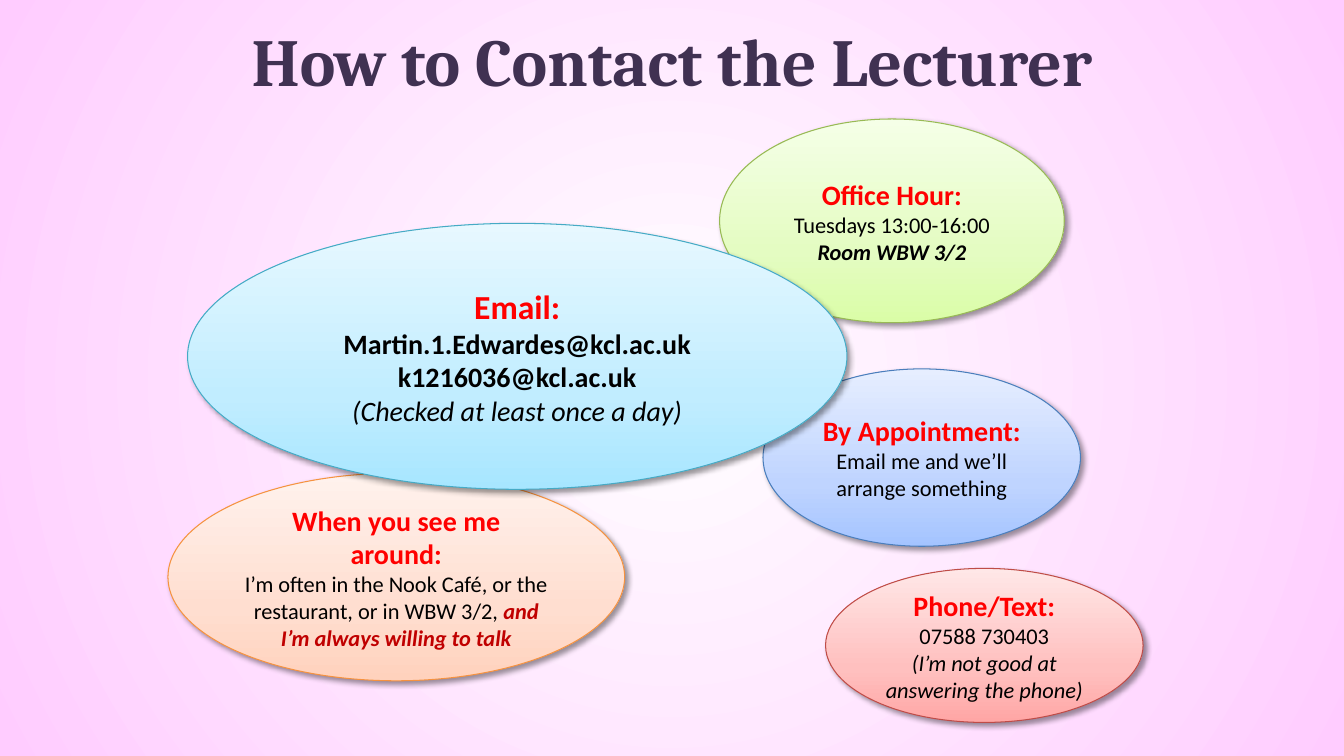
"""Build the slide that tells students how to contact the lecturer."""
import copy

import lxml.etree
import pptx
import pptx.dml.color
import pptx.enum.shapes
import pptx.enum.text
import pptx.oxml
import pptx.oxml.ns
import pptx.util

Pt = pptx.util.Pt
RGBColor = pptx.dml.color.RGBColor
qn = pptx.oxml.ns.qn

WHITE = RGBColor(0xFF, 0xFF, 0xFF)
PINK = RGBColor(0xFF, 0xCC, 0xFF)
PLUM = RGBColor(0x40, 0x31, 0x52)
BLACK = RGBColor(0, 0, 0)
RED = RGBColor(0xFF, 0, 0)
DARK_RED = RGBColor(0xC0, 0, 0)

ROSE = [RGBColor(0xFF, 0xA6, 0xA5), RGBColor(0xFF, 0xC0, 0xBF), RGBColor(0xFF, 0xE7, 0xE7)]
ROSE_EDGE = RGBColor(0xBF, 0x4C, 0x48)
BLUE = [RGBColor(0xA4, 0xC4, 0xFF), RGBColor(0xBF, 0xD4, 0xFF), RGBColor(0xE6, 0xEE, 0xFF)]
BLUE_EDGE = RGBColor(0x4B, 0x7E, 0xBC)
GREEN = [RGBColor(0xDA, 0xFD, 0xA7), RGBColor(0xE4, 0xFC, 0xC2), RGBColor(0xF5, 0xFF, 0xE7)]
GREEN_EDGE = RGBColor(0x98, 0xB9, 0x55)
ORANGE = [RGBColor(0xFF, 0xD2, 0xBD), RGBColor(0xFF, 0xDE, 0xD0), RGBColor(0xFF, 0xF2, 0xED)]
ORANGE_EDGE = RGBColor(0xF6, 0x92, 0x40)
AQUA = [RGBColor(0xA7, 0xE6, 0xFF), RGBColor(0xC1, 0xED, 0xFF), RGBColor(0xE7, 0xF8, 0xFF)]
AQUA_EDGE = RGBColor(0x46, 0xAA, 0xC5)

BUBBLE_STOPS = (0, 0.35, 1)
PLAIN = {"bold": False, "italic": False}
BOLD = {"bold": True, "italic": False}
ITALIC = {"bold": False, "italic": True}
BOLD_ITALIC = {"bold": True, "italic": True}

NS = 'xmlns:a="http://schemas.openxmlformats.org/drawingml/2006/main"'
SHADOW = (
    f'<a:outerShdw {NS} blurRad="{Pt(4)}" dist="{Pt(3)}" dir="2700000" algn="tl" rotWithShape="0">'
    '<a:srgbClr val="000000"><a:alpha val="40000"/></a:srgbClr></a:outerShdw>'
)
RADIAL = (
    f'<a:path {NS} path="circle">'
    '<a:fillToRect l="50000" t="50000" r="50000" b="50000"/></a:path>'
)


def set_stops(fill, colours, positions):
    """Give a gradient fill its colours and their positions."""
    for stop, colour, position in zip(fill.gradient_stops, colours, positions):
        stop.color.rgb = colour
        stop.position = position


def paint_background(slide):
    """Paint a radial gradient that is white in the middle."""
    fill = slide.background.fill
    fill.gradient()
    set_stops(fill, (WHITE, PINK), (0, 1))
    direction = next(slide.element.iter(qn("a:lin")))
    direction.getparent().replace(direction, pptx.oxml.parse_xml(RADIAL))


def add_run(paragraph, text, size, colour, style, face="Calibri"):
    """Add one formatted run to a paragraph."""
    run = paragraph.add_run()
    run.text = text
    for name, value in {"name": face, "size": Pt(size), **style}.items():
        setattr(run.font, name, value)
    run.font.color.rgb = colour


def place_title(slide, text):
    """Move the title placeholder and write the heading in it."""
    heading = slide.shapes.title
    place = {"left": Pt(120), "top": Pt(0), "width": Pt(720), "height": Pt(85)}
    for name, value in place.items():
        setattr(heading, name, value)
    heading.text_frame.vertical_anchor = pptx.enum.text.MSO_ANCHOR.MIDDLE
    paragraph = heading.text_frame.paragraphs[0]
    paragraph.alignment = pptx.enum.text.PP_ALIGN.CENTER
    add_run(paragraph, text, 48, PLUM, BOLD, "Cambria")


def add_bubble(slide, box, colours, edge, paragraphs):
    """Add a shaded ellipse holding paragraphs, each a list of runs."""
    bubble = slide.shapes.add_shape(
        pptx.enum.shapes.MSO_SHAPE.OVAL, *(Pt(length) for length in box)
    )
    bubble.fill.gradient()
    stop_list = next(bubble.element.iter(qn("a:gsLst")))
    stop_list.append(copy.deepcopy(stop_list[-1]))
    set_stops(bubble.fill, colours, BUBBLE_STOPS)
    bubble.fill.gradient_angle = 90
    bubble.line.color.rgb = edge
    bubble.line.width = Pt(0.75)
    bubble.shadow.inherit = False
    next(bubble.element.iter(qn("a:effectLst"))).append(pptx.oxml.parse_xml(SHADOW))

    frame = bubble.text_frame
    frame.word_wrap = True
    frame.vertical_anchor = pptx.enum.text.MSO_ANCHOR.MIDDLE
    for index, runs in enumerate(paragraphs):
        paragraph = frame.add_paragraph() if index else frame.paragraphs[0]
        paragraph.alignment = pptx.enum.text.PP_ALIGN.CENTER
        for run in runs:
            add_run(paragraph, *run)


def main():
    """Build and save the slide."""
    deck = pptx.Presentation()
    deck.slide_width, deck.slide_height = Pt(960), Pt(540)
    slide = deck.slides.add_slide(deck.slide_layouts[5])
    paint_background(slide)
    place_title(slide, "How to Contact the Lecturer")

    add_bubble(slide, (589.7, 406, 226.8, 110), ROSE, ROSE_EDGE, [
        [("Phone/Text:", 20, RED, BOLD)],
        [("07588 730403", 16, BLACK, PLAIN)],
        [("(I’m not good at answering the phone)", 16, BLACK, ITALIC)],
    ])
    add_bubble(slide, (545, 263.5, 226.8, 126.7), BLUE, BLUE_EDGE, [
        [("By Appointment:", 20, RED, BOLD)],
        [("Email me and we’ll arrange something", 16, BLACK, PLAIN)],
    ])
    add_bubble(slide, (514, 85, 246.2, 145.5), GREEN, GREEN_EDGE, [
        [("Office Hour:", 20, RED, BOLD)],
        [("Tuesdays 13:00-16:00", 16, BLACK, PLAIN)],
        [("Room WBW 3/2", 16, BLACK, BOLD_ITALIC)],
    ])
    add_bubble(slide, (120, 338, 326.2, 148.3), ORANGE, ORANGE_EDGE, [
        [("When you see me around:", 20, RED, BOLD)],
        [
            ("I’m often in the Nook Café, or the restaurant, or in WBW 3/2, ", 16, BLACK, PLAIN),
            ("and I’m always willing to talk", 16, DARK_RED, BOLD_ITALIC),
        ],
    ])
    add_bubble(slide, (134, 159.5, 471, 190), AQUA, AQUA_EDGE, [
        [("Email:", 24, RED, BOLD)],
        [("Martin.1.Edwardes@kcl.ac.uk", 20, BLACK, BOLD)],
        [("k1216036@kcl.ac.uk", 20, BLACK, BOLD)],
        [("(Checked at least once a day)", 20, BLACK, ITALIC)],
    ])
    deck.save("out.pptx")


if __name__ == "__main__":
    main()
